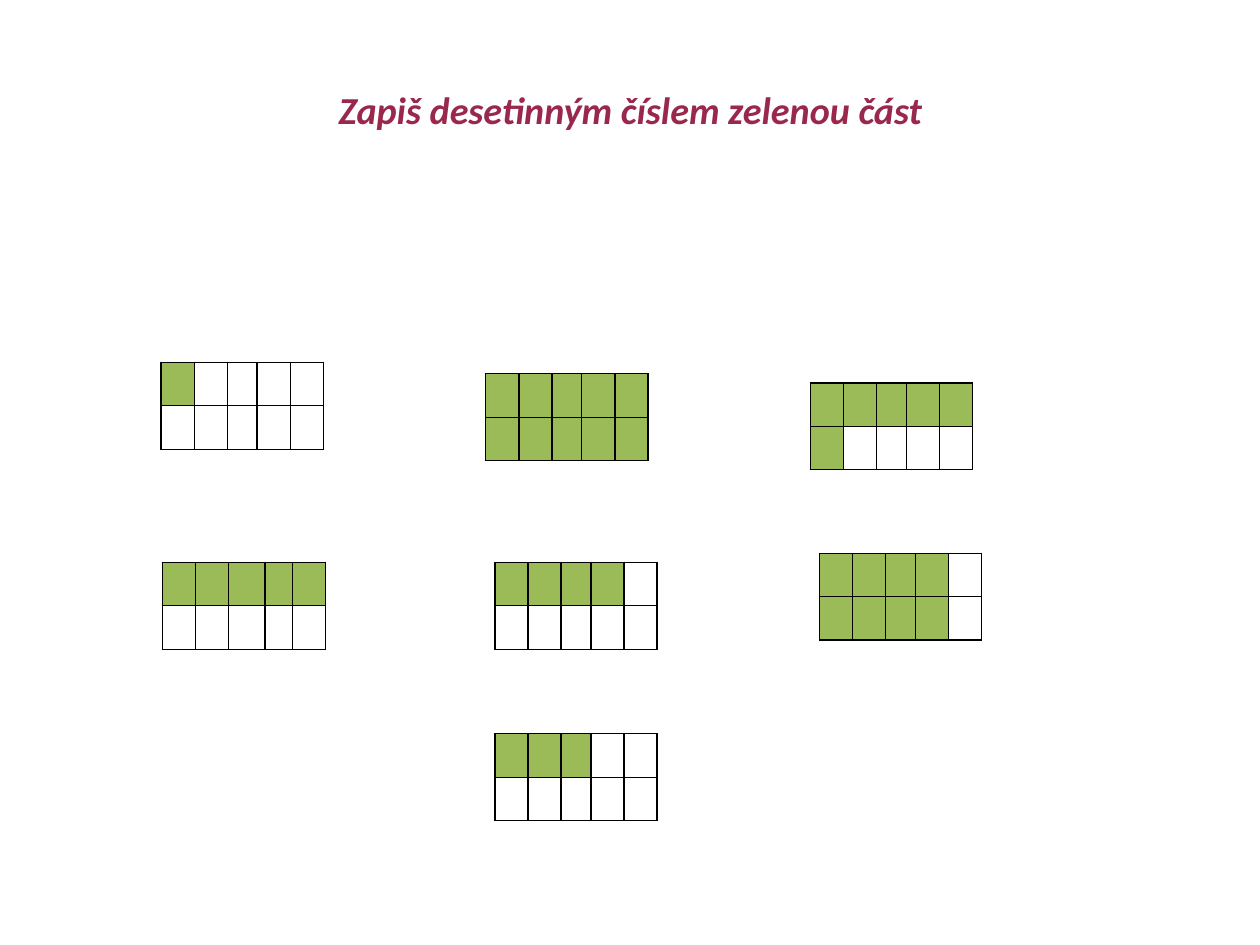
import pptx
import pptx.util
import pptx.dml.color
import pptx.enum.text
import pptx.oxml
import pptx.oxml.ns

Inches = pptx.util.Inches
RGB = pptx.dml.color.RGBColor.from_string
THEME = {
    "font": "Calibri",
    "title_size": 24,
    "title": "99284C",
    "green": "9BBB59",
    "white": "FFFFFF",
    "border": "000000",
}
CM_PER_INCH = 2.54
ROW_HEIGHT = 0.38
COLS = [0.29, 0.29, 0.26, 0.29, 0.29]
UNEVEN_COLS = [0.29, 0.29, 0.32, 0.23, 0.29]
GRIDS = [
    (1.41, 3.17, COLS, (1, 0)),
    (1.42, 4.92, UNEVEN_COLS, (5, 0)),
    (4.33, 4.92, COLS, (4, 0)),
    (7.17, 4.84, COLS, (4, 4)),
    (4.25, 3.27, COLS, (5, 5)),
    (7.09, 3.35, COLS, (5, 1)),
    (4.33, 6.42, COLS, (3, 0)),
]


def add_borders(cell):
    tcPr = cell._tc.get_or_add_tcPr()
    for side in ("lnL", "lnR", "lnT", "lnB"):
        tcPr.append(pptx.oxml.parse_xml(
            f'<a:{side} {pptx.oxml.ns.nsdecls("a")} w="12700"><a:solidFill>'
            f'<a:srgbClr val="{THEME["border"]}"/></a:solidFill></a:{side}>'))


prs = pptx.Presentation()
prs.slide_width = Inches(28 / CM_PER_INCH)
prs.slide_height = Inches(21 / CM_PER_INCH)
s = prs.slides.add_slide(prs.slide_layouts[6])

sp = s.shapes.add_textbox(Inches(0.81), Inches(0.34), Inches(9.41), Inches(1.24))
tf = sp.text_frame
tf.word_wrap = True
tf.margin_left = tf.margin_right = tf.margin_top = tf.margin_bottom = 0
tf.vertical_anchor = pptx.enum.text.MSO_ANCHOR.MIDDLE
p = tf.paragraphs[0]
p.text = "Zapiš desetinným číslem zelenou část"
p.alignment = pptx.enum.text.PP_ALIGN.CENTER
p.font.name = THEME["font"]
p.font.size = pptx.util.Pt(THEME["title_size"])
p.font.bold = p.font.italic = True
p.font.color.rgb = RGB(THEME["title"])

for left, top, widths, green_counts in GRIDS:
    table = s.shapes.add_table(
        len(green_counts), len(widths), Inches(left), Inches(top),
        Inches(sum(widths)), Inches(ROW_HEIGHT * len(green_counts))).table
    table.first_row = table.horz_banding = False
    for column, width in zip(table.columns, widths):
        column.width = Inches(width)
    for row, green_count in zip(table.rows, green_counts):
        row.height = Inches(ROW_HEIGHT)
        for i, cell in enumerate(row.cells):
            cell.margin_top = cell.margin_bottom = 0
            add_borders(cell)
            cell.fill.solid()
            cell.fill.fore_color.rgb = RGB(THEME["green" if i < green_count else "white"])

prs.save("out.pptx")
